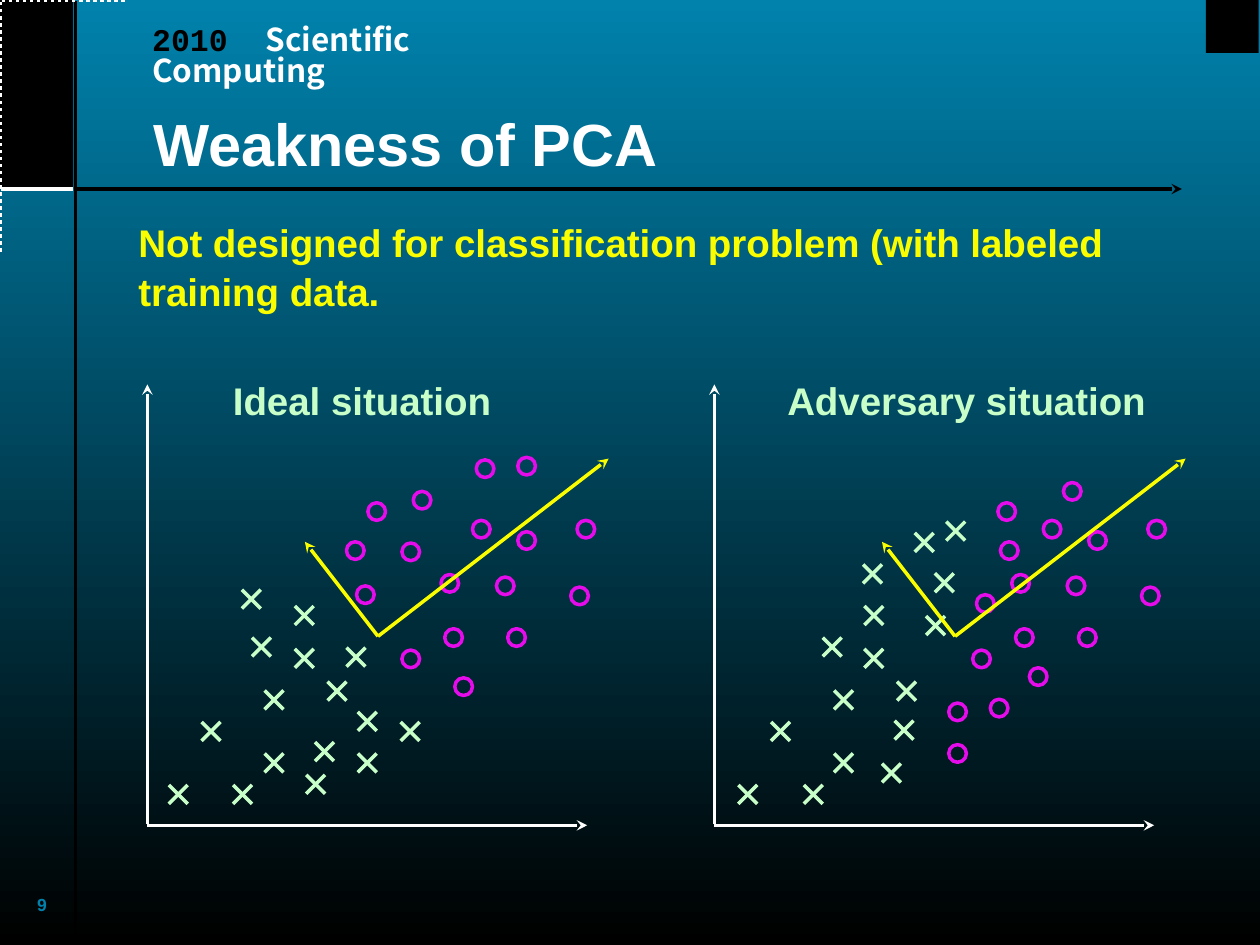
from dataclasses import dataclass

from lxml import etree
from pptx import Presentation
from pptx.dml.color import RGBColor
from pptx.enum.dml import MSO_LINE
from pptx.enum.shapes import MSO_CONNECTOR, MSO_SHAPE
from pptx.enum.text import MSO_ANCHOR, PP_ALIGN
from pptx.oxml.ns import qn
from pptx.util import Inches, Pt

STRAIGHT = MSO_CONNECTOR.STRAIGHT
RECT, OVAL = MSO_SHAPE.RECTANGLE, MSO_SHAPE.OVAL
DOTTED = MSO_LINE.ROUND_DOT
TOP, MIDDLE = MSO_ANCHOR.TOP, MSO_ANCHOR.MIDDLE
LEFT, RIGHT = PP_ALIGN.LEFT, PP_ALIGN.RIGHT


@dataclass(frozen=True)
class Theme:
    """Colours, fonts, type sizes and line width of the slide."""
    sky: str = "0082AD"
    black: str = "000000"
    white: str = "FFFFFF"
    yellow: str = "FAFD00"
    mint: str = "C8FEC8"
    magenta: str = "E60BEB"
    sans: str = "Arial"
    mono: str = "Courier New"
    cjk: str = "Noto Sans CJK SC"
    title: int = 34
    body: int = 22
    header: int = 18
    number: int = 10
    line: int = 2


T = Theme()
CROSS, CIRCLE = 0.15, 0.14

IDEAL_CROSSES = [
    (1.6, 5.73), (2.6, 5.41), (2.84, 5.98), (2.43, 6.15), (2.34, 5.15),
    (1.34, 6.23), (1.85, 6.23), (2.84, 5.65), (3.18, 5.73), (2, 5.06),
    (2.34, 4.81), (2.5, 5.89), (2.75, 5.14), (1.92, 4.68), (2.1, 5.98),
    (2.1, 5.48),
]
IDEAL_CIRCLES = [
    (4.58, 4.13), (3.61, 5.38), (4.03, 4.99), (3.53, 4.99), (2.83, 4.65),
    (4.53, 4.66), (4.11, 4.22), (2.92, 3.99), (3.78, 3.65), (3.19, 5.16),
    (3.19, 4.31), (4.11, 3.63), (2.75, 4.3), (3.94, 4.58), (3.28, 3.9),
    (3.5, 4.56), (3.75, 4.13),
]
ADVERSARY_CROSSES = [
    (6.12, 5.73), (7.12, 5.41), (7.42, 4.55), (7.1, 5.72), (6.86, 5.15),
    (5.86, 6.23), (6.38, 6.23), (7.26, 4.23), (7.51, 4.14), (6.53, 5.06),
    (6.86, 4.81), (7.35, 4.89), (7, 6.06), (6.85, 4.48), (6.62, 5.98),
    (6.62, 5.48),
]
ADVERSARY_CIRCLES = [
    (9.11, 4.13), (7.53, 5.58), (8.56, 4.99), (8.06, 4.99), (7.86, 5.55),
    (9.06, 4.66), (8.64, 4.22), (7.92, 3.99), (8.44, 3.83), (7.72, 5.16),
    (7.94, 4.3), (7.53, 5.91), (7.75, 4.72), (8.47, 4.58), (8.17, 5.3),
    (8.03, 4.56), (8.28, 4.13),
]


def rgb(color):
    """Turn a hex string into a colour."""
    return RGBColor.from_string(color)


def style_line(line, color):
    """Give a line its colour and the common width."""
    line.color.rgb = rgb(color)
    line.width = Pt(T.line)


def add_line(s, start, end, color, arrow=False):
    """Draw a straight line, with an arrowhead at its end on request."""
    sp = s.shapes.add_connector(STRAIGHT, *map(Inches, start + end))
    style_line(sp.line, color)
    if arrow:
        etree.SubElement(sp.line._get_or_add_ln(), qn("a:tailEnd"), type="stealth")
    etree.SubElement(sp._element.spPr, qn("a:effectLst"))


def add_block(s, x, y, w, h):
    """Draw a plain black rectangle."""
    sp = s.shapes.add_shape(RECT, *map(Inches, (x, y, w, h)))
    sp.shadow.inherit = False
    sp.fill.solid()
    sp.fill.fore_color.rgb = rgb(T.black)
    sp.line.fill.background()


def add_circle(s, x, y):
    """Draw a hollow circle marker."""
    sp = s.shapes.add_shape(OVAL, *map(Inches, (x, y, CIRCLE, CIRCLE)))
    sp.shadow.inherit = False
    sp.fill.background()
    style_line(sp.line, T.magenta)


def add_cross(s, x, y):
    """Draw a cross marker from two diagonals."""
    add_line(s, (x, y), (x + CROSS, y + CROSS), T.mint)
    add_line(s, (x + CROSS, y), (x, y + CROSS), T.mint)


def add_arc(s, points, steps=24):
    """Draw a dotted cubic curve through its four control points."""
    curve = []
    for i in range(steps + 1):
        t = i / steps
        weights = ((1 - t) ** 3, 3 * t * (1 - t) ** 2, 3 * t * t * (1 - t), t ** 3)
        curve.append(tuple(sum(w * p[axis] for w, p in zip(weights, points))
                           for axis in (0, 1)))
    fb = s.shapes.build_freeform(*curve[0], scale=Inches(1))
    fb.add_line_segments(curve[1:], close=False)
    sp = fb.convert_to_shape()
    sp.shadow.inherit = False
    sp.fill.background()
    style_line(sp.line, T.white)
    sp.line.dash_style = DOTTED


def add_shadow(r):
    """Give a run a black drop shadow."""
    effects = etree.Element(qn("a:effectLst"))
    shadow = etree.SubElement(effects, qn("a:outerShdw"), dist="38100", dir="2700000")
    etree.SubElement(shadow, qn("a:srgbClr"), val=T.black)
    r.font._element.find(qn("a:solidFill")).addnext(effects)


def add_tab(p, position):
    """Set a left tab stop in a paragraph."""
    tabs = etree.SubElement(p._p.get_or_add_pPr(), qn("a:tabLst"))
    etree.SubElement(tabs, qn("a:tab"), pos=str(Inches(position)), algn="l")


def add_text(s, box, *lines, size=T.body, color=T.white, font=T.sans, align=LEFT,
             anchor=TOP, spacing=1.0, wrap=False, shadow=False, tab=None):
    """Add bold text; a line is a string or a list of (text, font, colour) runs."""
    tf = s.shapes.add_textbox(*map(Inches, box)).text_frame
    tf.word_wrap = wrap
    tf.vertical_anchor = anchor
    for i, line in enumerate(lines):
        p = tf.add_paragraph() if i else tf.paragraphs[0]
        p.alignment = align
        p.line_spacing = spacing
        if tab:
            add_tab(p, tab)
        for text, face, ink in [(line, font, color)] if isinstance(line, str) else line:
            r = p.add_run()
            r.text = text
            r.font.size = Pt(size)
            r.font.bold = True
            r.font.color.rgb = rgb(ink)
            r.font.name = face
            if shadow:
                add_shadow(r)


def add_frame(s):
    """Draw the background, the corner ornaments, the rules and the header."""
    fill = s.background.fill
    fill.gradient()
    fill.gradient_angle = 270
    for stop, color in zip(fill.gradient_stops, (T.sky, T.black)):
        stop.color.rgb = rgb(color)
    add_block(s, 0, 0, 0.58, 1.5)
    add_line(s, (0.6, 1.5), (9.38, 1.5), T.black, arrow=True)
    add_block(s, 9.57, 0, 0.42, 0.42)
    add_line(s, (0.6, 0.01), (0.6, 7.49), T.black)
    add_line(s, (0.58, 1.5), (0.01, 1.5), T.white)
    add_text(s, (1.11, 0.16, 3.5, 0.4),
             [("2010\t", T.mono, T.black), ("Scientific Computing", T.cjk, T.white)],
             size=T.header, spacing=0.83, wrap=True, tab=0.9)
    add_text(s, (0.1, 7.05, 0.37, 0.27), "9", size=T.number, color=T.sky, align=RIGHT)
    add_arc(s, [(0.02, 1.5), (0.02, 0.68), (0.28, 0.02), (0.6, 0.02)])


def add_scatter(s, left, pivot, crosses, circles, label, label_box):
    """Draw one labelled scatter sketch with its axes and principal directions."""
    add_line(s, (left, 6.55), (left + 3.49, 6.55), T.white, arrow=True)
    add_line(s, (left, 6.54), (left, 3.05), T.white, arrow=True)
    for x, y in crosses:
        add_cross(s, x, y)
    for x, y in circles:
        add_circle(s, x, y)
    for dx, y in ((1.83, 3.64), (-0.58, 4.3)):
        add_line(s, (pivot, 5.05), (pivot + dx, y), T.yellow, arrow=True)
    add_text(s, label_box, label, color=T.mint, spacing=1.06)


def main():
    """Build the slide and save it."""
    prs = Presentation()
    prs.slide_width, prs.slide_height = Inches(10), Inches(7.5)
    s = prs.slides.add_slide(prs.slide_layouts[6])
    add_frame(s)
    add_text(s, (1.12, 0.73, 8.32, 0.88), "Weakness of PCA", size=T.title,
             anchor=MIDDLE, spacing=0.87, wrap=True, shadow=True)
    add_scatter(s, 1.17, 3, IDEAL_CROSSES, IDEAL_CIRCLES,
                "Ideal situation", (1.75, 2.92, 2.26, 0.47))
    add_scatter(s, 5.67, 7.58, ADVERSARY_CROSSES, ADVERSARY_CIRCLES,
                "Adversary situation", (6.15, 2.92, 3.06, 0.47))
    add_text(s, (1, 1.67, 7.97, 0.84),
             "Not designed for classification problem (with labeled",
             "training data.", color=T.yellow, spacing=1.06)
    prs.save("out.pptx")


if __name__ == "__main__":
    main()
